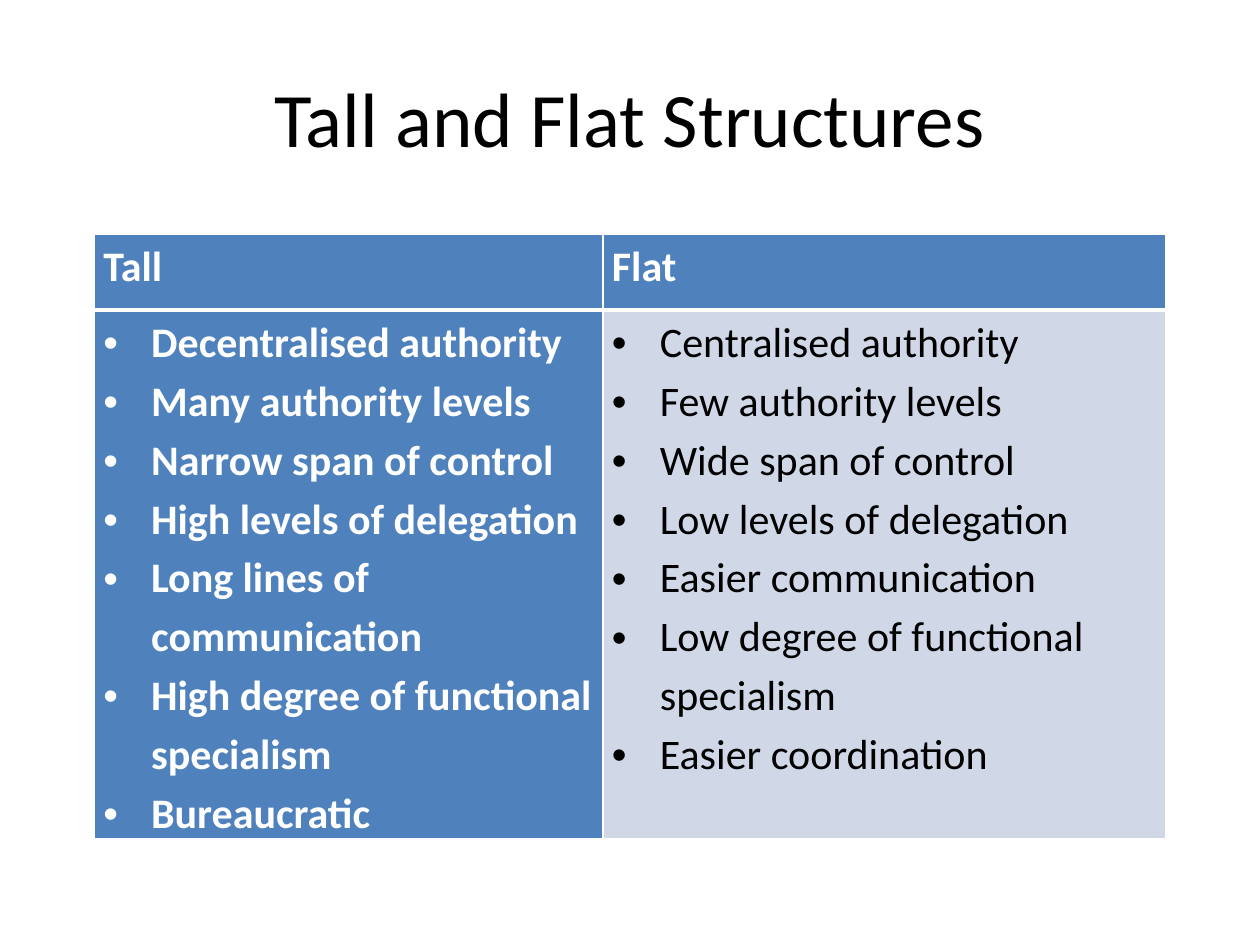
from pptx import Presentation
from pptx.dml.color import RGBColor
from pptx.enum.text import MSO_ANCHOR, PP_ALIGN
from pptx.oxml import parse_xml
from pptx.oxml.ns import nsdecls
from pptx.util import Inches, Pt

LEFT, CENTER = PP_ALIGN.LEFT, PP_ALIGN.CENTER
MIDDLE = MSO_ANCHOR.MIDDLE
COLORS = {"white": "FFFFFF", "black": "000000", "blue": "4F81BD", "pale": "D0D8E8"}
FONT = "Calibri"
INDENT = Inches(0.38)

TALL = [
    "Decentralised authority",
    "Many authority levels",
    "Narrow span of control",
    "High levels of delegation",
    "Long lines of communication",
    "High degree of functional specialism",
    "Bureaucratic",
]
FLAT = [
    "Centralised authority",
    "Few authority levels",
    "Wide span of control",
    "Low levels of delegation",
    "Easier communication",
    "Low degree of functional specialism",
    "Easier coordination",
]


def write(tf, lines, size=24, color="black", bold=False, align=LEFT, spacing=1.0, bullet=False):
    """Fill a text frame with one formatted paragraph per line."""
    for i, line in enumerate(lines):
        p = tf.add_paragraph() if i else tf.paragraphs[0]
        p.alignment, p.line_spacing = align, spacing
        if bullet:
            pPr = p._p.get_or_add_pPr()
            pPr.set("marL", str(INDENT))
            pPr.set("indent", str(-INDENT))
            pPr.append(parse_xml(f'<a:buFont {nsdecls("a")} typeface="Arial"/>'))
            pPr.append(parse_xml(f'<a:buChar {nsdecls("a")} char="•"/>'))
        r = p.add_run()
        r.text = line
        r.font.name, r.font.size, r.font.bold = FONT, Pt(size), bold
        r.font.color.rgb = RGBColor.from_string(COLORS[color])


class Deck:
    """Hold the presentation style and the current slide."""

    def __init__(self, width, height):
        self.prs = Presentation()
        self.prs.slide_width, self.prs.slide_height = Inches(width), Inches(height)
        self.slide = self.prs.slides.add_slide(self.prs.slide_layouts[6])

    def box(self, x, y, w, h):
        """Turn shares of the slide into lengths."""
        sw, sh = self.prs.slide_width, self.prs.slide_height
        return int(x * sw), int(y * sh), int(w * sw), int(h * sh)

    def title(self, text, *area):
        """Add a centred title."""
        tf = self.slide.shapes.add_textbox(*self.box(*area)).text_frame
        tf.word_wrap, tf.vertical_anchor = True, MIDDLE
        write(tf, [text], size=44, align=CENTER)

    def cell(self, cell, lines, fill, edges, **style):
        """Style one table cell, with edge widths in points by side."""
        cell.margin_left = cell.margin_right = Inches(0.07)
        cell.margin_top = cell.margin_bottom = 0
        tcPr = cell._tc.get_or_add_tcPr()
        for side, width in edges.items():
            tcPr.append(parse_xml(
                f'<a:ln{side} {nsdecls("a")} w="{Pt(width)}"><a:solidFill>'
                f'<a:srgbClr val="{COLORS["white"]}"/></a:solidFill></a:ln{side}>'))
        cell.fill.solid()
        cell.fill.fore_color.rgb = RGBColor.from_string(COLORS[fill])
        write(cell.text_frame, lines, spacing=1.15, **style)

    def comparison(self, columns, widths, heights, *area):
        """Add a table with a heading over a bullet list in each column."""
        x, y, w, h = self.box(*area)
        table = self.slide.shapes.add_table(2, len(columns), x, y, w, h).table
        table.horz_banding = False
        for row, share in zip(table.rows, heights):
            row.height = int(h * share)
        for i, (heading, items, fill, color, bold) in enumerate(columns):
            table.columns[i].width = int(w * widths[i])
            self.cell(table.cell(0, i), [heading], "blue", {"L": 1, "R": 1, "T": 1, "B": 3},
                      color="white", bold=True)
            self.cell(table.cell(1, i), items, fill, {"L": 1, "R": 1, "T": 3, "B": 1},
                      color=color, bold=bold, bullet=True)


def main():
    """Build the slide and save it."""
    deck = Deck(10, 7.5)
    deck.title("Tall and Flat Structures", 0.05, 0.04, 0.9, 1 / 6)
    columns = [
        ("Tall", TALL, "blue", "white", True),
        ("Flat", FLAT, "pale", "black", False),
    ]
    deck.comparison(columns, (0.475, 0.525), (1 / 8, 7 / 8), 0.075, 0.248, 0.85, 0.64)
    deck.prs.save("out.pptx")


if __name__ == "__main__":
    main()
